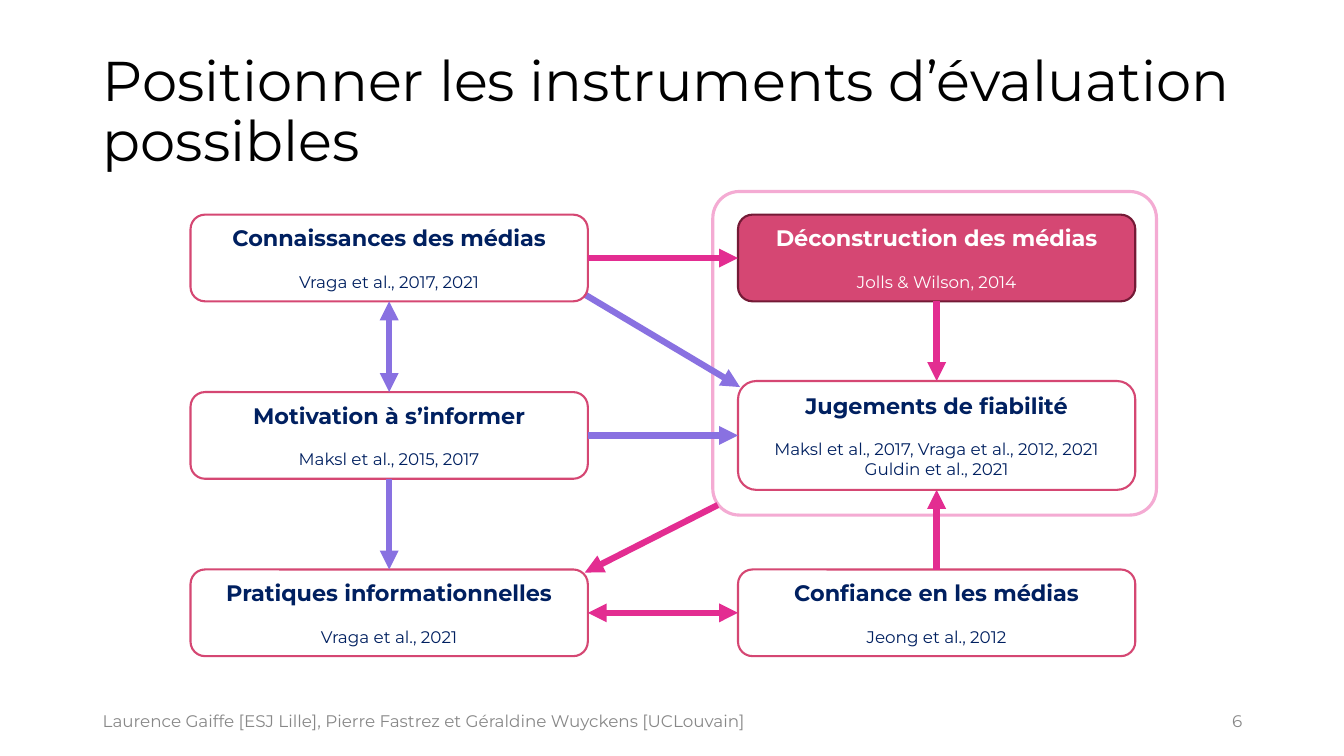
from pptx import Presentation
from pptx.dml.color import RGBColor
from pptx.enum.shapes import MSO_CONNECTOR, MSO_SHAPE
from pptx.enum.text import MSO_ANCHOR, PP_ALIGN
from pptx.oxml.ns import qn
from pptx.util import Inches, Pt
from lxml import etree

ROUNDED = MSO_SHAPE.ROUNDED_RECTANGLE
STRAIGHT = MSO_CONNECTOR.STRAIGHT
MIDDLE = MSO_ANCHOR.MIDDLE
LEFT, CENTER, RIGHT = PP_ALIGN.LEFT, PP_ALIGN.CENTER, PP_ALIGN.RIGHT

# Connection sites of a rounded rectangle
TOP_SITE, LEFT_SITE, BOTTOM_SITE, RIGHT_SITE = range(4)

WHITE, BLACK, GREY, NAVY = "FFFFFF", "000000", "888888", "002060"
ROSE, DARK_ROSE, PALE_PINK = "D54773", "741A36", "F4ABD3"
PINK, VIOLET = "E32D91", "8971E1"

LEFT_COLUMN, RIGHT_COLUMN = 1.89, 7.32
ROWS = [2.13 + 1.76 * row for row in range(3)]
BOX_WIDTH, BOX_HEIGHT = 3.94, 0.86


def color(hex_string):
    return RGBColor.from_string(hex_string)


class DiagramSlide:
    font_name = "Montserrat"

    def __init__(self, presentation):
        self.slide = presentation.slides.add_slide(presentation.slide_layouts[6])

    def add_text_run(self, paragraph, text, size, ink, align, bold=False):
        paragraph.alignment = align
        run = paragraph.add_run()
        run.text = text
        run.font.name = self.font_name
        run.font.size = Pt(size)
        run.font.bold = bold
        run.font.color.rgb = color(ink)

    def text(self, place, text, size, ink, align=LEFT, line_spacing=1.0):
        shape = self.slide.shapes.add_textbox(*map(Inches, place))
        frame = shape.text_frame
        frame.word_wrap = True
        frame.vertical_anchor = MIDDLE
        paragraph = frame.paragraphs[0]
        paragraph.line_spacing = line_spacing
        self.add_text_run(paragraph, text, size, ink, align)

    def rounded(self, place, fill, outline, line_width, corner):
        shape = self.slide.shapes.add_shape(ROUNDED, *map(Inches, place))
        shape.adjustments[0] = corner
        shape.shadow.inherit = False
        shape.fill.solid()
        shape.fill.fore_color.rgb = color(fill)
        shape.line.color.rgb = color(outline)
        shape.line.width = Pt(line_width)
        return shape

    def concept(self, left, top, heading, sources, height=BOX_HEIGHT,
                fill=WHITE, outline=ROSE, ink=NAVY):
        """Draw a box with a bold heading above its list of sources."""
        shape = self.rounded((left, top, BOX_WIDTH, height), fill, outline, 1.5, 0.167)
        frame = shape.text_frame
        frame.word_wrap = True
        frame.vertical_anchor = MIDDLE
        self.add_text_run(frame.paragraphs[0], heading, 16, ink, CENTER, bold=True)
        for index, source in enumerate(sources):
            paragraph = frame.add_paragraph()
            if index == 0:
                paragraph.space_before = Pt(14.5)
            self.add_text_run(paragraph, source, 12, ink, CENTER)
        return shape

    def arrow(self, ink, start=(0, 0), end=(0, 0), both_ends=False):
        connector = self.slide.shapes.add_connector(
            STRAIGHT, *map(Inches, (*start, *end)))
        connector.line.color.rgb = color(ink)
        connector.line.width = Pt(4.5)
        properties = connector._element.spPr
        line = properties.find(qn("a:ln"))
        for tag in ("a:headEnd", "a:tailEnd") if both_ends else ("a:tailEnd",):
            etree.SubElement(line, qn(tag), type="triangle")
        etree.SubElement(properties, qn("a:effectLst"))
        return connector

    def link(self, ink, source, source_site, target, target_site, both_ends=False):
        """Draw an arrow glued to two boxes."""
        connector = self.arrow(ink, both_ends=both_ends)
        connector.begin_connect(source, source_site)
        connector.end_connect(target, target_site)


def main():
    presentation = Presentation()
    presentation.slide_width = Inches(13.33)
    presentation.slide_height = Inches(7.5)
    page = DiagramSlide(presentation)

    page.text((0.92, 0.4, 11.5, 1.45),
              "Positionner les instruments d’évaluation possibles",
              40, BLACK, line_spacing=0.9)
    page.text((0.92, 6.95, 8.34, 0.4),
              "Laurence Gaiffe [ESJ Lille], Pierre Fastrez et Géraldine Wuyckens [UCLouvain]",
              12, GREY)
    page.text((9.42, 6.95, 3, 0.4), "6", 12, GREY, RIGHT)

    page.rounded((7.07, 1.9, 4.4, 3.21), WHITE, PALE_PINK, 2.25, 0.082)
    page.arrow(VIOLET, (5.73, 2.88), (7.34, 3.84))

    knowledge = page.concept(LEFT_COLUMN, ROWS[0], "Connaissances des médias",
                             ["Vraga et al., 2017, 2021"])
    motivation = page.concept(LEFT_COLUMN, ROWS[1], "Motivation à s’informer",
                              ["Maksl et al., 2015, 2017"])
    practices = page.concept(LEFT_COLUMN, ROWS[2], "Pratiques informationnelles",
                             ["Vraga et al., 2021"])
    trust = page.concept(RIGHT_COLUMN, ROWS[2], "Confiance en les médias",
                         ["Jeong et al., 2012"])
    deconstruction = page.concept(RIGHT_COLUMN, ROWS[0], "Déconstruction des médias",
                                  ["Jolls & Wilson, 2014"],
                                  fill=ROSE, outline=DARK_ROSE, ink=WHITE)
    judgements = page.concept(RIGHT_COLUMN, 3.78, "Jugements de fiabilité",
                              ["Maksl et al., 2017, Vraga et al., 2012, 2021",
                               "Guldin et al., 2021"], height=1.08)

    page.link(PINK, knowledge, RIGHT_SITE, deconstruction, LEFT_SITE)
    page.link(PINK, deconstruction, BOTTOM_SITE, judgements, TOP_SITE)
    page.link(VIOLET, motivation, BOTTOM_SITE, practices, TOP_SITE)
    page.link(PINK, practices, RIGHT_SITE, trust, LEFT_SITE, both_ends=True)
    page.link(VIOLET, knowledge, BOTTOM_SITE, motivation, TOP_SITE, both_ends=True)
    page.link(VIOLET, motivation, RIGHT_SITE, judgements, LEFT_SITE)
    page.link(PINK, trust, TOP_SITE, judgements, BOTTOM_SITE)
    page.arrow(PINK, (7.12, 5.01), (5.8, 5.68))

    presentation.save("out.pptx")


if __name__ == "__main__":
    main()
